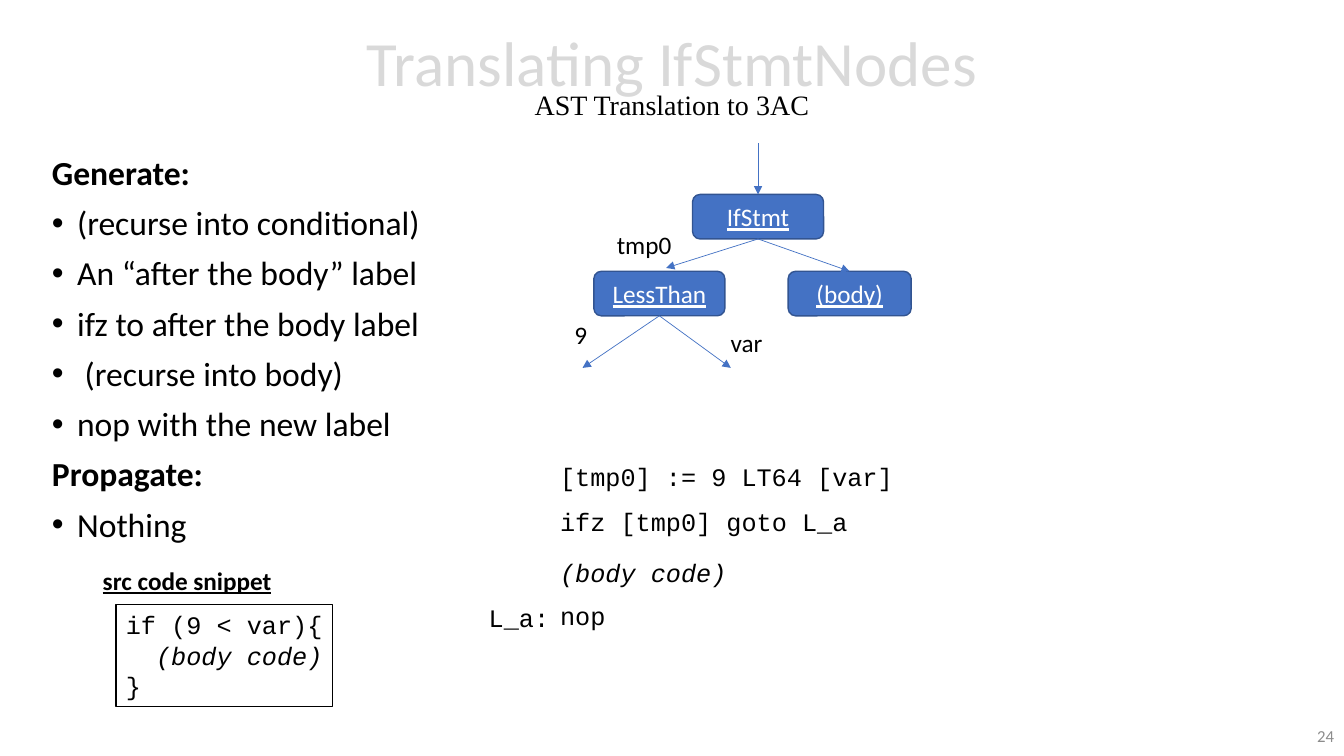
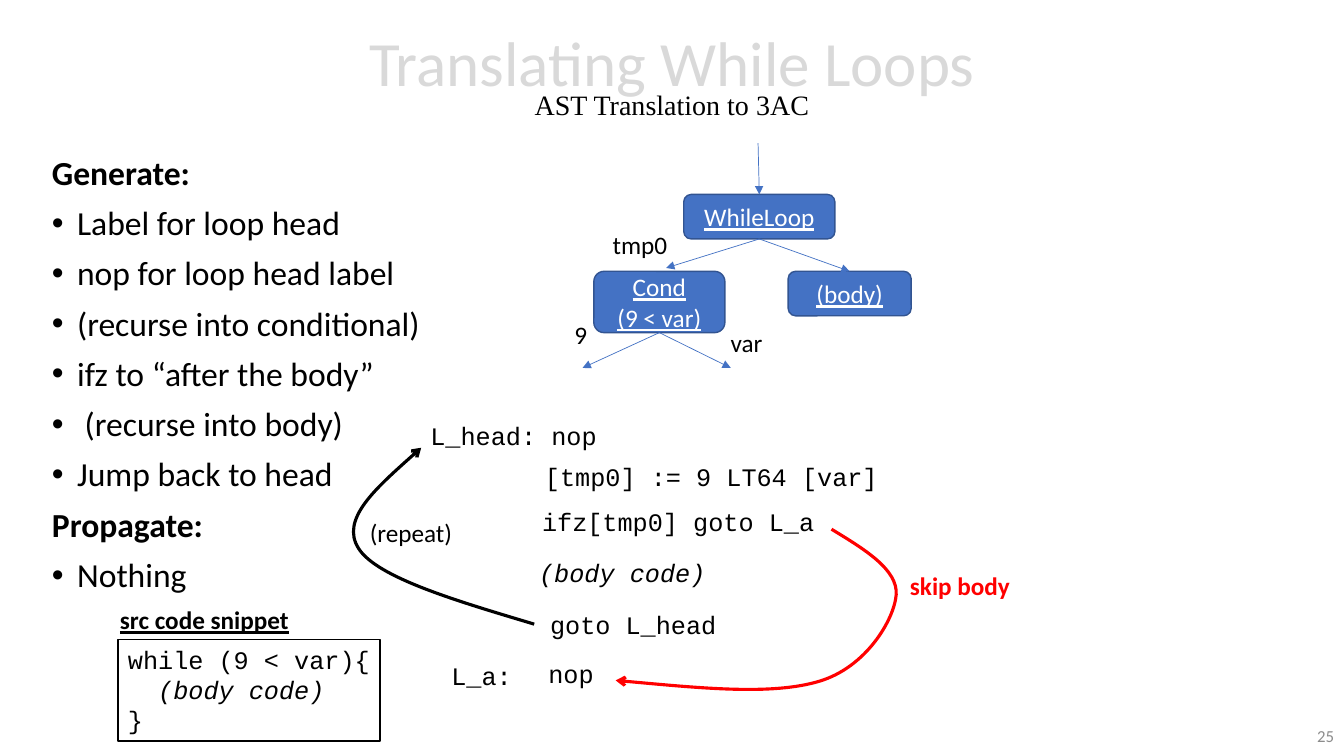
from lxml import etree
from pptx import Presentation
from pptx.dml.color import RGBColor
from pptx.enum.shapes import MSO_CONNECTOR, MSO_SHAPE
from pptx.enum.text import MSO_ANCHOR, MSO_AUTO_SIZE, PP_ALIGN
from pptx.oxml.ns import qn
from pptx.util import Emu, Inches, Pt

SLIDE_W, SLIDE_H = 12192000, 6858000
COL, ROW = SLIDE_W / 32, SLIDE_H / 18
STRAIGHT = MSO_CONNECTOR.STRAIGHT
RECT, ROUNDED = MSO_SHAPE.RECTANGLE, MSO_SHAPE.ROUNDED_RECTANGLE
TOP, MIDDLE = MSO_ANCHOR.TOP, MSO_ANCHOR.MIDDLE
LEFT, CENTER, RIGHT = PP_ALIGN.LEFT, PP_ALIGN.CENTER, PP_ALIGN.RIGHT
FIT = MSO_AUTO_SIZE.SHAPE_TO_FIT_TEXT
SANS, MONO, SERIF = "Calibri", "Courier New", "Times New Roman"
COLORS = {
    "ink": "000000", "paper": "FFFFFF", "title": "D9D9D9", "number": "8C8C8C",
    "node": "4472C4", "node_edge": "325491", "skip": "FF0000",
}
LINE_H = 0.96
NODE_TOP, CHILD_TOP, NODE_H = 4.63, 6.46, 1.06


def rgb(name):
    return RGBColor.from_string(COLORS[name])


def box(col, row, cols, rows):
    return [Emu(round(n)) for n in (col * COL, row * ROW, cols * COL, rows * ROW)]


def code_width(text):
    return max(map(len, text.split("\n"))) * 0.36 + 0.48


def style(run, size=18, font=SANS, color="ink", bold=False, italic=False, underline=False):
    run.font.size, run.font.name = Pt(size), font
    run.font.color.rgb = rgb(color)
    run.font.bold, run.font.italic, run.font.underline = bold, italic, underline


def write(shape, text, align=LEFT, anchor=TOP, wrap=True, **look):
    frame = shape.text_frame
    frame.text = text
    frame.word_wrap, frame.vertical_anchor = wrap, anchor
    for paragraph in frame.paragraphs:
        paragraph.alignment = align
        for run in paragraph.runs:
            style(run, **look)
    return frame


def label(slide, text, col, row, cols, **look):
    area = slide.shapes.add_textbox(*box(col, row, cols, LINE_H))
    write(area, text, wrap=False, **look).auto_size = FIT


def code(slide, text, col, row, **look):
    label(slide, text, col, row, code_width(text), font=MONO, **look)


def panel(slide, kind, area, fill, edge):
    shape = slide.shapes.add_shape(kind, *area)
    shape.shadow.inherit = False
    shape.fill.solid()
    shape.fill.fore_color.rgb = rgb(fill)
    shape.line.color.rgb = rgb(edge)
    shape.line.width = Pt(1)
    return shape


def node(slide, text, center, row, cols, rows=NODE_H):
    area = box(center - cols / 2, row, cols, rows)
    shape = panel(slide, ROUNDED, area, "node", "node_edge")
    write(shape, text, CENTER, MIDDLE, color="paper", underline=True)
    return shape


def draw_line(shape, color, width, head):
    shape.line.color.rgb = rgb(color)
    shape.line.width = Pt(width)
    outline = shape._element.spPr.find(qn("a:ln"))
    etree.SubElement(outline, qn("a:tailEnd"), type=head)


def edge(slide, col, row, parent=None, child=None):
    x, y = box(col, row, 0, 0)[:2]
    link = slide.shapes.add_connector(STRAIGHT, x, y, x, y)
    if parent is not None:
        link.begin_connect(parent, 2)
    if child is not None:
        link.end_connect(child, 0)
    draw_line(link, "node", 0.5, "triangle")
    etree.SubElement(link._element.spPr, qn("a:effectLst"))


def jump(slide, color, points):
    spots = [tuple(box(col, row, 0, 0)[:2]) for col, row in points]
    builder = slide.shapes.build_freeform(*spots[0])
    builder.add_line_segments(spots[1:], close=False)
    curve = builder.convert_to_shape()
    curve.shadow.inherit = False
    curve.fill.background()
    draw_line(curve, color, 2.25, "arrow")
    outline = curve._element.find(".//" + qn("a:path"))
    legs = outline.findall(qn("a:lnTo"))
    for first in range(0, len(legs), 3):
        bezier = etree.SubElement(outline, qn("a:cubicBezTo"))
        for leg in legs[first:first + 3]:
            bezier.append(leg[0])
            outline.remove(leg)


def title(slide, topic):
    area = slide.shapes.add_textbox(*box(4, 0.22, 24, 3.48))
    frame = write(area, topic + "\vAST Translation to 3AC", CENTER, MIDDLE)
    heading = frame.paragraphs[0]
    heading.line_spacing = 0.7
    style(heading.runs[0], 45, color="title")
    style(heading.runs[1], 20, SERIF)


def page_number(slide, number):
    area = slide.shapes.add_textbox(*box(24.8, 17.04, 7.2, LINE_H))
    write(area, str(number), RIGHT, MIDDLE, size=12, color="number")


def steps(slide, sections):
    area = slide.shapes.add_textbox(*box(1, 3.6, 11.4, 7))
    lines = [line for name, items in sections.items() for line in (name, *items)]
    frame = write(area, "\n".join(lines), size=24)
    for paragraph in frame.paragraphs:
        paragraph.line_spacing, paragraph.space_before = 0.9, Pt(10)
        if paragraph.text in sections:
            paragraph.runs[0].font.bold = True
            continue
        props = paragraph._p.get_or_add_pPr()
        props.set("marL", str(Inches(0.25)))
        props.set("indent", str(-Inches(0.25)))
        etree.SubElement(props, qn("a:buFont"), typeface="Arial")
        etree.SubElement(props, qn("a:buChar"), char="•")


def snippet(slide, opening, col, row, caption_col, caption_row):
    label(slide, "src code snippet", caption_col, caption_row, 4.54,
          bold=True, underline=True)
    area = box(col, row, code_width(opening), 2.42)
    source = panel(slide, RECT, area, "paper", "ink")
    frame = write(source, opening + "\n(body code)\n}", wrap=False, font=MONO)
    frame.auto_size = FIT
    inner = frame.paragraphs[1]
    inner.runs[0].font.italic = True
    inner._p.get_or_add_pPr().set("marL", str(Inches(0.3)))


def tree(slide, root_text, root_center, root_cols, test_text, test_rows, tmp_col):
    root = node(slide, root_text, root_center, NODE_TOP, root_cols)
    body = node(slide, "(body)", 20.23, CHILD_TOP, 2.93)
    test = node(slide, test_text, 15.7, CHILD_TOP, 3.12, test_rows)
    edge(slide, 18.05, 3.41, child=root)
    edge(slide, 15.86, 6.38, parent=root)
    edge(slide, 0, 0, parent=root, child=body)
    for leaf_col in (13.87, 17.4):
        edge(slide, leaf_col, 8.76, parent=test)
    label(slide, "tmp0", tmp_col, 5.35, 1.8)
    label(slide, "9", 13.44, 7.49, 0.79)
    label(slide, "var", 17.16, 7.68, 1.25)


def new_slide(deck, topic, number, generated):
    slide = deck.slides.add_slide(deck.slide_layouts[6])
    title(slide, topic)
    steps(slide, {"Generate:": generated, "Propagate:": ["Nothing"]})
    page_number(slide, number)
    return slide


def if_slide(deck):
    slide = new_slide(deck, "Translating IfStmtNodes", 24, [
        "(recurse into conditional)", "An “after the body” label",
        "ifz to after the body label", " (recurse into body)",
        "nop with the new label"])
    tree(slide, "IfStmt", 18.05, 3.12, "LessThan", NODE_H, 14.45)
    code(slide, "[tmp0] := 9 LT64 [var]", 13.1, 10.87)
    code(slide, "ifz [tmp0] goto L_a", 13.1, 11.93)
    code(slide, "(body code)", 13.1, 13.15, italic=True)
    code(slide, "L_a:", 11.4, 14.23)
    code(slide, "nop", 13.1, 14.18)
    snippet(slide, "if (9 < var){", 2.76, 14.4, 2.21, 13.34)


def while_slide(deck):
    slide = new_slide(deck, "Translating While Loops", 25, [
        "Label for loop head", "nop for loop head label",
        "(recurse into conditional)", "ifz to “after the body”",
        " (recurse into body)", "Jump back to head"])
    tree(slide, "WhileLoop", 18.08, 3.6, "Cond\n(9 < var)", 1.46, 14.35)
    code(slide, "L_head: nop", 10.01, 9.89)
    code(slide, "[tmp0] := 9 LT64 [var]", 12.74, 10.87)
    code(slide, "ifz[tmp0] goto L_a", 12.67, 11.93)
    code(slide, "(body code)", 12.6, 13.15, italic=True)
    code(slide, "goto L_head", 12.86, 14.38)
    code(slide, "L_a:", 10.51, 15.6)
    code(slide, "nop", 12.82, 15.55)
    snippet(slide, "while (9 < var){", 2.81, 15.22, 2.62, 14.28)
    jump(slide, "skip", [
        (19.8, 12.6), (20.59, 13.08), (21.38, 13.56), (21.34, 14.16),
        (21.29, 14.76), (20.62, 15.89), (19.51, 16.22),
        (18.38, 16.56), (16.54, 16.37), (14.66, 16.2)])
    jump(slide, "ink", [
        (12.72, 14.86), (10.85, 14.3), (8.98, 13.75), (8.54, 13.06),
        (8.09, 12.36), (9.07, 11.52), (10.03, 10.66)])
    label(slide, "(repeat)", 8.57, 12.19, 2.47)
    label(slide, "skip body", 21.43, 13.46, 2.88, color="skip", bold=True)


def main():
    deck = Presentation()
    deck.slide_width, deck.slide_height = Emu(SLIDE_W), Emu(SLIDE_H)
    if_slide(deck)
    while_slide(deck)
    deck.save("out.pptx")


if __name__ == "__main__":
    main()
